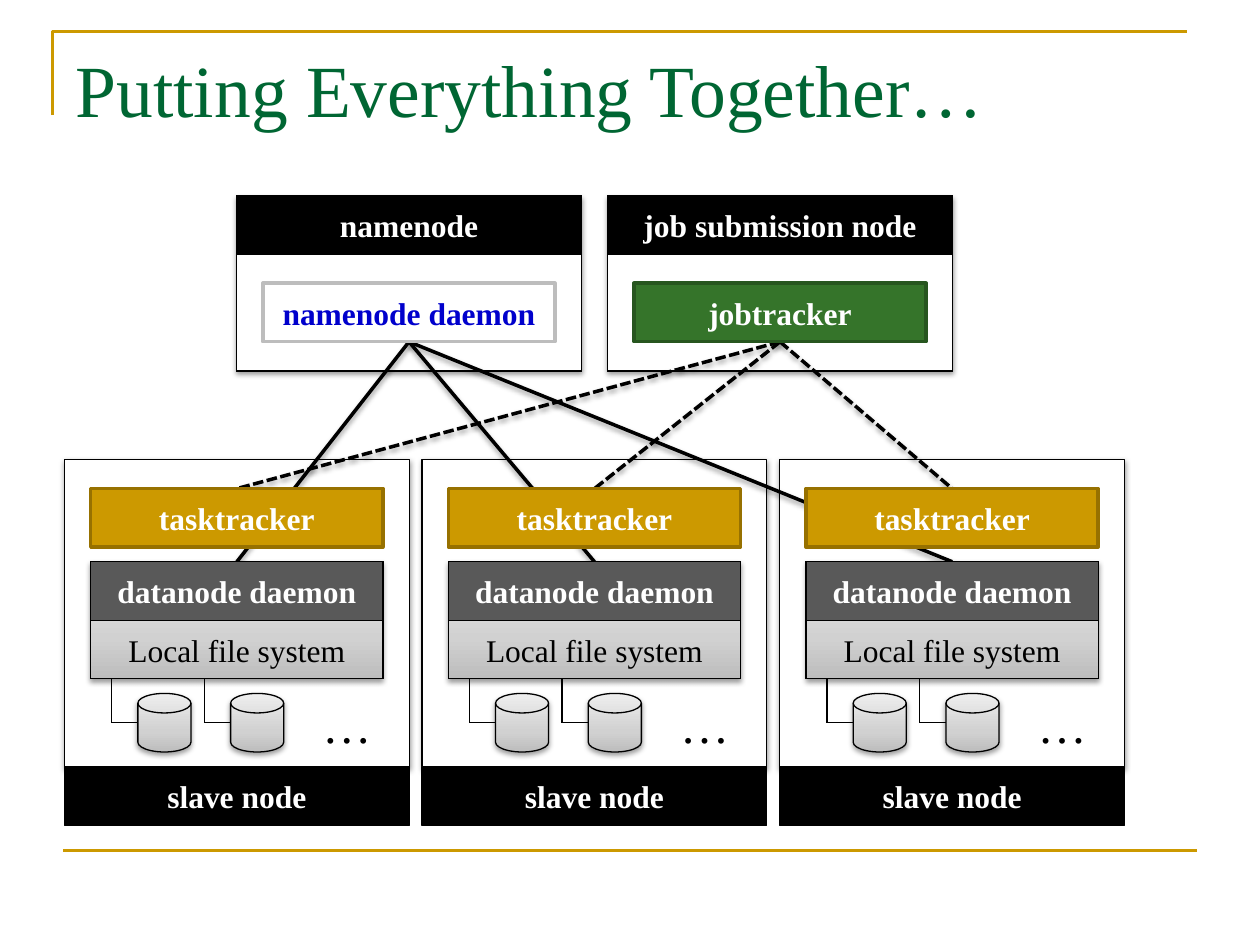
from copy import deepcopy
from dataclasses import dataclass

from lxml.etree import SubElement
from pptx import Presentation
from pptx.dml.color import RGBColor
from pptx.enum.dml import MSO_LINE
from pptx.enum.shapes import MSO_CONNECTOR, MSO_SHAPE
from pptx.enum.text import MSO_ANCHOR, MSO_AUTO_SIZE, PP_ALIGN
from pptx.oxml.ns import qn
from pptx.util import Cm, Pt


@dataclass(frozen=True)
class Theme:
    font: str = "Times New Roman"
    title_size: int = 42
    label_size: int = 18
    dots_size: int = 28
    thin: float = 0.75
    frame_width: float = 1.5
    thick: float = 2
    black: str = "000000"
    white: str = "FFFFFF"
    title: str = "006633"
    gold: str = "CC9900"
    gold_edge: str = "977100"
    green: str = "35742A"
    green_edge: str = "27561F"
    blue: str = "0000CC"
    silver: str = "BDBDBD"
    gray: str = "595959"
    metal: tuple = ((0, "BDBDBD"), (0.35, "D1D1D1"), (1, "EEEEEE"))


THEME = Theme()

TITLE = "Putting Everything Together…"
# header, daemon, daemon fill, daemon edge, daemon text, link dash, linked slave part
MASTERS = [
    ("namenode", "namenode daemon", THEME.white, THEME.silver, THEME.blue, None, "datanode"),
    ("job submission node", "jobtracker", THEME.green, THEME.green_edge, THEME.white,
     MSO_LINE.SQUARE_DOT, "tasktracker"),
]
SLAVES = ["slave node"] * 3
TRACKER, DATANODE, FILE_SYSTEM, MORE_DISKS = "tasktracker", "datanode daemon", "Local file system", "…"
DISKS_PER_SLAVE = 2

# Lengths in centimetres
NODE_WIDTH, INSET, BAR = 6.95, 0.53, 1.18
INNER_WIDTH = NODE_WIDTH - 2 * INSET
MASTER_LEFT, MASTER_TOP, MASTER_PITCH = 4.77, 3.94, 7.48
MASTER_BODY = 2 * BAR
DAEMON_TOP = MASTER_TOP + 1.5 * BAR
SLAVE_LEFT, SLAVE_TOP, SLAVE_PITCH, SLAVE_HEIGHT = 1.3, 9.26, 7.21, 6.2
TRACKER_TOP = SLAVE_TOP + BAR / 2
DATANODE_TOP = TRACKER_TOP + 1.25 * BAR
FILE_SYSTEM_TOP = DATANODE_TOP + BAR
FILE_SYSTEM_BOTTOM = FILE_SYSTEM_TOP + BAR
DISK_TOP = FILE_SYSTEM_BOTTOM + BAR / 4
DISK_OFFSET, DISK_PITCH, DISK_WIDTH, WIRE_LENGTH = 1.48, 1.87, 1.07, 0.53
SLAVE_LABEL_TOP = SLAVE_TOP + SLAVE_HEIGHT


def color(value):
    return RGBColor.from_string(value)


def set_effect(shape, shadow):
    """Replace the inherited shadow by a soft one below, or by none; call after the line is set."""
    effects = SubElement(shape._element.spPr, qn("a:effectLst"))
    if shadow:
        outer = SubElement(effects, qn("a:outerShdw"), blurRad=str(Pt(3.1)), dist=str(Pt(1.6)),
                           dir="5400000", rotWithShape="0")
        black = SubElement(outer, qn("a:srgbClr"), val=THEME.black)
        SubElement(black, qn("a:alpha"), val="38000")


def set_line(shape, line_color, width):
    shape.line.color.rgb = color(line_color)
    shape.line.width = Pt(width)


def set_fill(shape, fill):
    """Fill with nothing (None), one colour, or a tuple of gradient stops running upwards."""
    if fill is None:
        shape.fill.background()
    elif isinstance(fill, str):
        shape.fill.solid()
        shape.fill.fore_color.rgb = color(fill)
    else:
        shape.fill.gradient()
        shape.fill.gradient_angle = 90
        stop_list = shape._element.spPr.find(".//" + qn("a:gsLst"))
        stop_list.append(deepcopy(stop_list[0]))
        for stop, (position, stop_color) in zip(shape.fill.gradient_stops, fill):
            stop.position = position
            stop.color.rgb = color(stop_color)


def write(shape, text, text_color, size, bold=False):
    paragraph = shape.text_frame.paragraphs[0]
    run = paragraph.add_run()
    run.text = text
    run.font.name = THEME.font
    run.font.size = Pt(size)
    run.font.bold = bold
    run.font.color.rgb = color(text_color)
    return paragraph


def add_box(slide, left, top, width, height, fill=None, edge=THEME.black, edge_width=THEME.thin,
            text=None, text_color=THEME.white, bold=True, shadow=False, kind=MSO_SHAPE.RECTANGLE):
    box = slide.shapes.add_shape(kind, Cm(left), Cm(top), Cm(width), Cm(height))
    set_fill(box, fill)
    set_line(box, edge, edge_width)
    set_effect(box, shadow)
    if text:
        box.text_frame.vertical_anchor = MSO_ANCHOR.MIDDLE
        write(box, text, text_color, THEME.label_size, bold).alignment = PP_ALIGN.CENTER
    return box


def add_line(slide, start, end, line_color=THEME.black, width=THEME.thin, shadow=False):
    line = slide.shapes.add_connector(MSO_CONNECTOR.STRAIGHT, *map(Cm, start + end))
    set_line(line, line_color, width)
    set_effect(line, shadow)
    return line


def add_frame(slide):
    builder = slide.shapes.build_freeform(Cm(1.06), Cm(2.32))
    builder.add_line_segments([(Cm(1.06), Cm(0.63)), (Cm(23.92), Cm(0.63))], close=False)
    corner = builder.convert_to_shape()
    set_fill(corner, None)
    set_line(corner, THEME.gold, THEME.frame_width)
    set_effect(corner, False)
    add_line(slide, (1.27, 17.15), (24.13, 17.15), THEME.gold, THEME.frame_width)


def add_title(slide):
    title = slide.shapes.title
    title.left, title.top, title.width, title.height = Cm(1.27), Cm(0.76), Cm(22.86), Cm(3.18)
    title.text_frame.vertical_anchor = MSO_ANCHOR.TOP
    write(title, TITLE, THEME.title, THEME.title_size).alignment = PP_ALIGN.LEFT


def add_slave(slide, left, label):
    """Draw the contents of a slave node and return the parts that links end at."""
    inner = left + INSET
    add_box(slide, inner, DATANODE_TOP, INNER_WIDTH, 2 * BAR, THEME.metal, shadow=True)
    datanode = add_box(slide, inner, DATANODE_TOP, INNER_WIDTH, BAR, THEME.gray, text=DATANODE)
    add_box(slide, inner, FILE_SYSTEM_TOP, INNER_WIDTH, BAR, text=FILE_SYSTEM,
            text_color=THEME.black, bold=False)
    for number in range(DISKS_PER_SLAVE):
        disk_left = left + DISK_OFFSET + number * DISK_PITCH
        add_box(slide, disk_left, DISK_TOP, DISK_WIDTH, BAR, THEME.metal, shadow=True,
                kind=MSO_SHAPE.FLOWCHART_MAGNETIC_DISK)
        elbow = (disk_left - WIRE_LENGTH, DISK_TOP + BAR / 2)
        add_line(slide, (elbow[0], FILE_SYSTEM_BOTTOM), elbow)
        add_line(slide, elbow, (disk_left, elbow[1]))
    dots = slide.shapes.add_textbox(Cm(left + 4.95), Cm(13.87), Cm(1.68), Cm(1.65))
    dots.text_frame.word_wrap = False
    dots.text_frame.auto_size = MSO_AUTO_SIZE.SHAPE_TO_FIT_TEXT
    write(dots, MORE_DISKS, THEME.black, THEME.dots_size)
    tracker = add_box(slide, inner, TRACKER_TOP, INNER_WIDTH, BAR, THEME.gold, THEME.gold_edge,
                      THEME.thick, TRACKER)
    add_box(slide, left, SLAVE_LABEL_TOP, NODE_WIDTH, BAR, THEME.black, text=label)
    return {"datanode": datanode, "tasktracker": tracker}


def main():
    presentation = Presentation()
    presentation.slide_width, presentation.slide_height = Cm(25.4), Cm(19.05)
    slide = presentation.slides.add_slide(presentation.slide_layouts[5])
    add_frame(slide)
    add_title(slide)

    master_lefts = [MASTER_LEFT + i * MASTER_PITCH for i in range(len(MASTERS))]
    slave_lefts = [SLAVE_LEFT + i * SLAVE_PITCH for i in range(len(SLAVES))]
    panels = [(left, MASTER_TOP, BAR + MASTER_BODY) for left in master_lefts]
    panels += [(left, SLAVE_TOP, SLAVE_HEIGHT) for left in slave_lefts]
    for left, top, height in panels:
        panel = add_box(slide, left, top, NODE_WIDTH, height, THEME.white, shadow=True)

    slaves = [add_slave(slide, left, label) for left, label in zip(slave_lefts, SLAVES)]
    for left, (header, name, fill, edge, text_color, dash, target) in zip(master_lefts, MASTERS):
        add_box(slide, left, MASTER_TOP, NODE_WIDTH, BAR, THEME.black, text=header)
        add_box(slide, left, MASTER_TOP + BAR, NODE_WIDTH, MASTER_BODY)
        daemon = add_box(slide, left + INSET, DAEMON_TOP, INNER_WIDTH, BAR, fill, edge,
                         THEME.thick, name, text_color)
        for slave in slaves:
            link = add_line(slide, (0, 0), (1, 1), width=THEME.thick, shadow=True)
            link.begin_connect(daemon, 2)
            link.end_connect(slave[target], 0)
            if dash:
                link.line.dash_style = dash
            panel._element.addnext(link._element)  # links lie above the panels, below their contents

    presentation.save("out.pptx")


if __name__ == "__main__":
    main()
